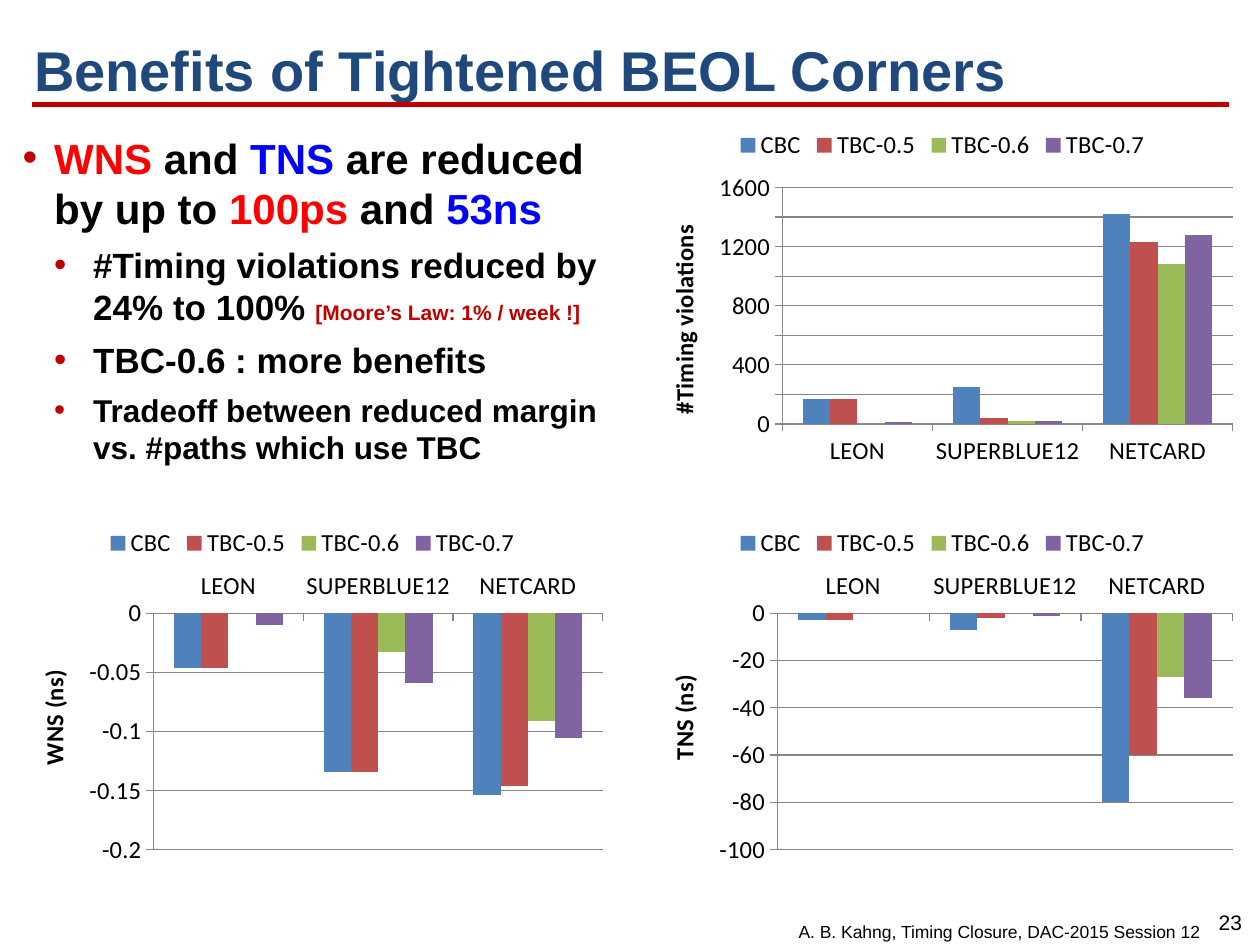
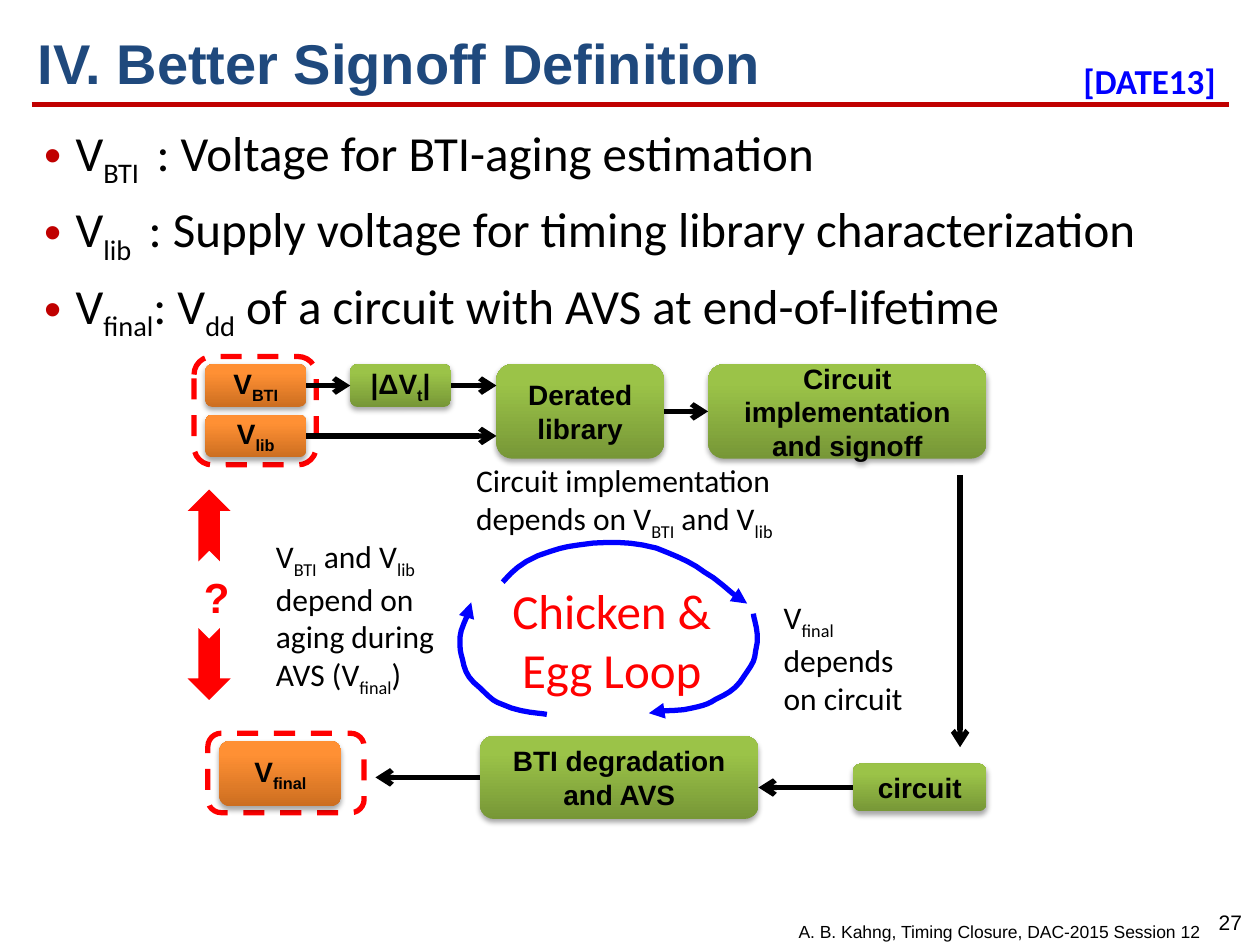
"""Builds two slides on tightened corners and better signoff definition."""
from lxml.etree import SubElement as Sub
from pptx import Presentation
from pptx.chart.data import CategoryChartData as Data
from pptx.dml.color import RGBColor
from pptx.enum.chart import XL_CHART_TYPE as Kind, XL_LEGEND_POSITION as Spot
from pptx.enum.chart import XL_TICK_LABEL_POSITION as Label, XL_TICK_MARK as Tick
from pptx.enum.dml import MSO_LINE as Dash
from pptx.enum.shapes import MSO_CONNECTOR as Wire, MSO_SHAPE as Form
from pptx.enum.text import MSO_ANCHOR as Anchor, MSO_AUTO_SIZE as Fit, PP_ALIGN as Align
from pptx.oxml.ns import qn
from pptx.util import Inches, Pt

BLACK = RGBColor(0x00, 0x00, 0x00)
RED = RGBColor(0xFF, 0x00, 0x00)
BLUE = RGBColor(0x00, 0x00, 0xFF)
NAVY = RGBColor(0x1F, 0x49, 0x7D)
BRICK = RGBColor(0xC0, 0x00, 0x00)
GRAY = RGBColor(0x86, 0x86, 0x86)
ORANGE = RGBColor(0xCC, 0x6E, 0x20), RGBColor(0xFF, 0x90, 0x34)
GREEN = RGBColor(0x77, 0x97, 0x37), RGBColor(0x9B, 0xC3, 0x48)
BARS = (RGBColor(0x4F, 0x81, 0xBD), RGBColor(0xC0, 0x50, 0x4D),
        RGBColor(0x9B, 0xBB, 0x59), RGBColor(0x80, 0x64, 0xA2))
SANS, BODY = "Arial", "Calibri"

deck = Presentation()
deck.slide_width, deck.slide_height = Inches(10), Inches(7.5)
CELL = deck.slide_width // 100


def grid(*cells):
    """Turns grid cells, a hundred to the slide's width, into lengths."""
    return [int(cell * CELL) for cell in cells]


def write(par, text, size, tint, face=SANS, bold=False):
    """Adds runs to a paragraph, with subscripts between tildes."""
    for turn, bit in enumerate(text.split("~")):
        if bit:
            run = par.add_run()
            run.text = bit
            font = run.font
            font.size, font.name, font.bold = Pt(size), face, bold
            font.color.rgb = tint
            if turn % 2:
                font._element.set("baseline", "-25000")


strokes, notes = [], []

heads = [
    ("Benefits of Tightened BEOL Corners", (1.7, 2.4, 90, 6.2), "23"),
    ("IV. Better Signoff Definition", (2, 1.2, 95, 7.5), "27"),
]
for name, box, page in heads:
    slide = deck.slides.add_slide(deck.slide_layouts[1])
    title = slide.shapes.title
    title.left, title.top, title.width, title.height = grid(*box)
    title.text_frame.vertical_anchor = Anchor.MIDDLE
    title.text_frame.auto_size = Fit.NONE
    par = title.text_frame.paragraphs[0]
    par.alignment = Align.LEFT
    write(par, name, 32, NAVY, SANS, True)
    rule = slide.shapes.add_connector(Wire.STRAIGHT, *grid(2.5, 8.3, 97.5, 8.3))
    strokes.append((rule, BRICK, None))
    notes += [
        (slide, (95.6, 71.7, 4.1, 3), page, 12, BLACK, SANS, False, Align.CENTER, 0, False),
        (slide, (56.2, 72.6, 40, 2.7), "A. B. Kahng, Timing Closure, DAC-2015 Session 12",
         10, BLACK, SANS, False, Align.RIGHT, 0, True),
    ]
gains, loop = deck.slides

TOP, SUB = (0, 2.5, -2.5), (1, 5.6, -3.1)
lists = [
    (gains, (0.8, 10, 51, 26.4), SANS, True, 6, [
        (TOP, [("WNS", 24, RED), (" and ", 24, BLACK), ("TNS", 24, BLUE),
               (" are reduced by up to ", 24, BLACK), ("100ps", 24, RED),
               (" and ", 24, BLACK), ("53ns", 24, BLUE)]),
        (SUB, [("#Timing violations reduced by 24% to 100% ", 20, BLACK),
               ("[Moore’s Law: 1% / week !]", 12, BRICK)]),
        (SUB, [("TBC-0.6 : more benefits", 20, BLACK)]),
        (SUB, [("Tradeoff between reduced margin vs. #paths which use TBC", 18, BLACK)]),
    ]),
    (loop, (2.5, 9.2, 95, 60), BODY, False, 5.6, [
        (TOP, [("V~BTI ~ : Voltage for BTI-aging estimation", 28, BLACK)]),
        (TOP, [("V~lib ~ : Supply voltage for timing library characterization", 28, BLACK)]),
        (TOP, [("V~final~: V~dd~ of a circuit with AVS at end-of-lifetime", 28, BLACK)]),
    ]),
]
for slide, box, face, bold, gap, items in lists:
    body = slide.placeholders[1]
    body.left, body.top, body.width, body.height = grid(*box)
    frame = body.text_frame
    frame.auto_size = Fit.NONE
    for turn, ((level, left, hang), parts) in enumerate(items):
        par = frame.add_paragraph() if turn else frame.paragraphs[0]
        par.level, par.space_before = level, Pt(gap)
        for text, size, tint in parts:
            write(par, text, size, tint, face, bold)
        prop = par._p.get_or_add_pPr()
        for key, cells in (("marL", left), ("indent", hang)):
            prop.set(key, str(grid(cells)[0]))
        Sub(Sub(prop, qn("a:buClr")), qn("a:srgbClr"), val=str(BRICK))
        Sub(prop, qn("a:buFont"), typeface=SANS)
        Sub(prop, qn("a:buChar"), char="•")

names = ("CBC", "TBC-0.5", "TBC-0.6", "TBC-0.7")
charts = [
    ("WNS (ns)", 0.8, 40.8, (-0.2, 0, 0.05), "General",
     [(-0.046, -0.134, -0.154), (-0.046, -0.134, -0.146),
      (0, -0.033, -0.091), (-0.01, -0.059, -0.106)]),
    ("TNS (ns)", 50.8, 40.8, (-100, 0, 20), "0",
     [(-3, -7, -80), (-3, -2, -60), (0, 0, -27), (0, -1, -36)]),
    ("#Timing violations", 50.8, 9.2, (0, 1600, 200), "General",
     [(170, 250, 1420), (170, 40, 1230), (0, 20, 1080), (10, 20, 1280)]),
]
for name, left, top, (low, high, step), form, rows in charts:
    data = Data(number_format=form)
    data.categories = ["LEON", "SUPERBLUE12", "NETCARD"]
    for key, row in zip(names, rows):
        data.add_series(key, row)
    chart = gains.shapes.add_chart(
        Kind.COLUMN_CLUSTERED, *grid(left, top, 48, 28.4), data).chart
    chart.has_title = False
    chart.font.size, chart.font.name = Pt(14), BODY
    chart.font.color.rgb = BLACK
    chart.has_legend = True
    chart.legend.position = Spot.TOP
    chart.legend.include_in_layout = False
    plot = chart.plots[0]
    plot.gap_width, plot.overlap, plot.vary_by_categories = 150, 0, False
    for bar, tint in zip(plot.series, BARS):
        bar.invert_if_negative = False
        bar.format.fill.solid()
        bar.format.fill.fore_color.rgb = tint
    cat, val = chart.category_axis, chart.value_axis
    val.minimum_scale, val.maximum_scale, val.major_unit = low, high, step
    val.has_major_gridlines = True
    val.tick_labels.number_format = form
    val.tick_labels.number_format_is_linked = False
    cat.tick_label_position = Label.HIGH if low < 0 else Label.LOW
    for axis in (cat, val):
        axis.major_tick_mark = Tick.OUTSIDE
        axis.format.line.color.rgb = GRAY
    val.major_gridlines.format.line.color.rgb = GRAY
    write(val.axis_title.text_frame.paragraphs[0], name, 14, BLACK, BODY, True)

for box in ((16.5, 58.2, 12.4, 6.3), (15.4, 28.3, 9.7, 8.6)):
    ring = loop.shapes.add_shape(Form.ROUNDED_RECTANGLE, *grid(*box))
    ring.fill.background()
    ring.line.dash_style = Dash.DASH
    strokes.append((ring, RED, None))

steps = [
    ("lib", (16.3, 32.9, 8, 3.4), ORANGE, "V~lib~"),
    ("bti", (16.3, 28.9, 8, 3.4), ORANGE, "V~BTI~"),
    ("store", (39.4, 28.9, 13.3, 7.5), GREEN, "Derated library"),
    ("delta", (27.8, 28.9, 8, 3.4), GREEN, "|ΔV~t~|"),
    ("build", (56.2, 28.9, 22.1, 7.5), GREEN, "Circuit implementation and signoff"),
    ("chip", (67.7, 60.6, 10.6, 3.8), GREEN, "circuit"),
    ("aging", (38.1, 58.4, 22.1, 6.6), GREEN, "BTI degradation and AVS"),
    ("final", (17.4, 58.8, 9.7, 5.2), ORANGE, "V~final~"),
]
nodes = {}
for key, box, tints, text in steps:
    node = nodes[key] = loop.shapes.add_shape(Form.ROUNDED_RECTANGLE, *grid(*box))
    node.line.fill.background()
    node.fill.gradient()
    node.fill.gradient_angle = 90
    for stop, tint, spot in zip(node.fill.gradient_stops, tints, (0, 0.8)):
        stop.color.rgb, stop.position = tint, spot
    node.shadow.inherit = False
    glow = Sub(node.element.spPr.find(qn("a:effectLst")), qn("a:outerShdw"),
               blurRad="40000", dist="23000", dir="5400000", rotWithShape="0")
    Sub(Sub(glow, qn("a:srgbClr"), val=str(BLACK)), qn("a:alpha"), val="35000")
    frame = node.text_frame
    frame.word_wrap, frame.vertical_anchor = True, Anchor.MIDDLE
    frame.paragraphs[0].alignment = Align.CENTER
    write(frame.paragraphs[0], text, 16, BLACK, SANS, True)

arrows = [
    ("chip", 1, (67.7, 62.5, 60.2, 62.5), None),
    ("aging", 1, (38.1, 61.7, 29.8, 61.7), None),
    ("bti", 3, (24.3, 30.6, 27.8, 30.6), "delta"),
    ("lib", 3, (24.3, 34.6, 39.4, 34.6), None),
    ("delta", 3, (35.8, 30.6, 39.4, 30.6), None),
    ("store", 3, (52.7, 32.65, 56.2, 32.65), "build"),
    (None, 0, (76.2, 37.7, 76.2, 59.3), None),
]
for start, side, ends, stop in arrows:
    link = loop.shapes.add_connector(Wire.STRAIGHT, *grid(*ends))
    if start:
        link.begin_connect(nodes[start], side)
    if stop:
        link.end_connect(nodes[stop], 1)
    strokes.append((link, BLACK, "arrow"))

for top, turn in ((40, 270), (51, 90)):
    mark = loop.shapes.add_shape(Form.NOTCHED_RIGHT_ARROW, *grid(13.75, top, 5.7, 3.4))
    mark.rotation = turn
    mark.fill.solid()
    mark.fill.fore_color.rgb = RED
    mark.line.fill.background()
    mark.shadow.inherit = False

curves = [
    [(39.9, 46.2), (40.3, 45.8), (41, 44.8), (42.7, 44.1), (44.7, 43.4), (44.7, 43.4),
     (47.1, 43.1), (48.9, 43), (50.2, 43), (52.1, 43.5), (53.6, 44.1), (54.9, 44.6),
     (55.9, 45.4), (57.1, 46), (58.5, 47.6), (59.3, 47.9)],
    [(59.8, 48.7), (59.8, 49.1), (60.2, 49.9), (60.1, 51), (59.8, 52.4), (60.1, 52.2),
     (59.1, 53.6), (58.5, 54.6), (57.9, 55), (56.8, 55.5), (56.2, 55.9), (55.8, 56),
     (54.9, 56.2), (54, 56.5), (52, 56.3), (51.5, 56.6)],
    [(43.4, 56.7), (43, 56.6), (41.9, 56.6), (40.6, 56.2), (39.2, 55.6), (39.4, 55.9),
     (38.1, 54.6), (37.1, 53.8), (36.9, 53.3), (36.7, 52.3), (36.5, 51.7), (36.5, 51.3),
     (36.5, 50.6), (36.5, 49.8), (37.5, 48.3), (37.4, 47.8)],
]
for knots in curves:
    dots = []
    for first in range(0, len(knots) - 1, 3):
        for t in (0.2, 0.4, 0.6, 0.8, 1):
            mix = (1 - t) ** 3, 3 * t * (1 - t) ** 2, 3 * t * t * (1 - t), t ** 3
            quad = knots[first:first + 4]
            dots.append(grid(*(sum(m * k[way] for m, k in zip(mix, quad)) for way in (0, 1))))
    pen = loop.shapes.build_freeform(*grid(*knots[0]))
    pen.add_line_segments(dots, close=False)
    arc = pen.convert_to_shape()
    arc.fill.background()
    strokes.append((arc, BLUE, "triangle"))

for shape, tint, tail in strokes:
    shape.line.color.rgb, shape.line.width = tint, Pt(3)
    prop = shape.element.spPr
    if tail:
        Sub(prop.find(qn("a:ln")), qn("a:tailEnd"), type=tail)
    Sub(prop, qn("a:effectLst"))

notes += [
    (loop, (15.2, 44.9, 3.6, 4.1), "?", 24, RED, SANS, True, Align.LEFT, 0, False),
    (loop, (36.9, 45.6, 23.3, 8.5), "Chicken & Egg Loop",
     28, RED, BODY, False, Align.CENTER, 0, True),
    (loop, (19.7, 42.1, 17, 13.1), "V~BTI~ and V~lib~ depend on aging during AVS (V~final~)",
     18, BLACK, BODY, False, Align.LEFT, 1.2, True),
    (loop, (56.2, 47, 17.3, 10.1), "V~final~ depends on circuit",
     18, BLACK, BODY, False, Align.LEFT, 5, True),
    (loop, (31.8, 36.1, 35.6, 7.1), "Circuit implementation depends on V~BTI~ and V~lib~",
     18, BLACK, BODY, False, Align.LEFT, 5, True),
    (loop, (85, 4.2, 12.6, 4.4), "[DATE13]", 20, BLUE, BODY, True, Align.LEFT, 0, False),
]
for slide, box, text, size, tint, face, bold, side, inset, wrap in notes:
    frame = slide.shapes.add_textbox(*grid(*box)).text_frame
    frame.word_wrap = wrap
    frame.margin_left = grid(1 + inset)[0]
    frame.paragraphs[0].alignment = side
    write(frame.paragraphs[0], text, size, tint, face, bold)

deck.save("out.pptx")
